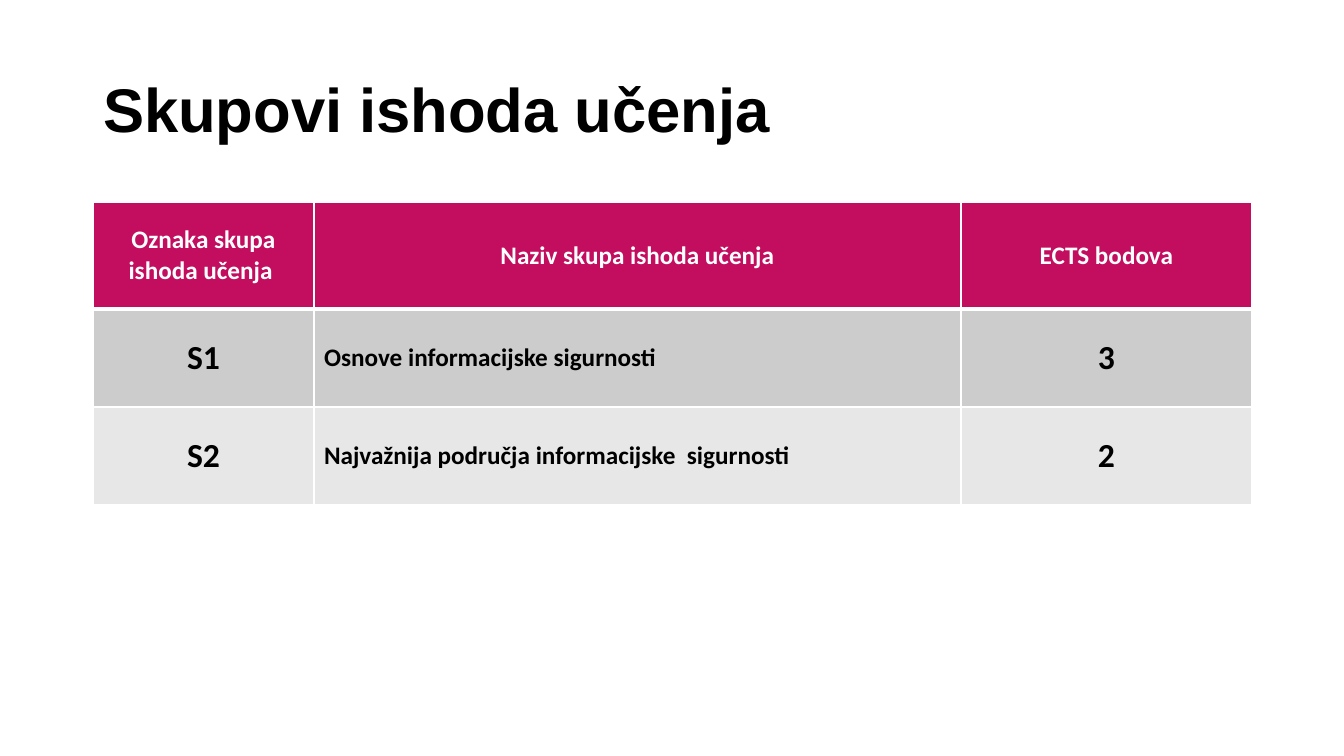
"""Build a slide with a title and a table of learning outcome sets."""
from lxml import etree
from pptx import Presentation
from pptx.dml.color import RGBColor
from pptx.enum.text import MSO_ANCHOR, PP_ALIGN
from pptx.oxml.ns import qn
from pptx.util import Pt

PX = 12192000 / 1344
LEFT, CENTER = PP_ALIGN.LEFT, PP_ALIGN.CENTER
MIDDLE = MSO_ANCHOR.MIDDLE
WHITE = RGBColor(0xFF, 0xFF, 0xFF)
BLACK = RGBColor(0, 0, 0)
PINK = RGBColor(0xC3, 0x0E, 0x60)
GRAY = RGBColor(0xCC, 0xCC, 0xCC)
PALE = RGBColor(0xE7, 0xE7, 0xE7)

COLS = (221, 647, 291)
ROWS = (107, 98, 98)
FILLS = (PINK, GRAY, PALE)
CELLS = (
    ("Oznaka skupa ishoda učenja ", "Naziv skupa ishoda učenja", "ECTS bodova"),
    ("S1", "Osnove informacijske sigurnosti", "3"),
    ("S2", "Najvažnija područja informacijske  sigurnosti", "2"),
)


def px(n):
    return round(n * PX)


def style(para, name, size, color, align):
    para.alignment = align
    font = para.font
    font.name, font.size, font.bold = name, Pt(size), True
    font.color.rgb = color


def add_title(slide, text):
    title = slide.shapes.title
    title.left, title.top = px(93), px(40)
    title.width, title.height = px(1159), px(146)
    frame = title.text_frame
    frame.text = text
    frame.vertical_anchor = MIDDLE
    para = frame.paragraphs[0]
    para.line_spacing = 0.9
    style(para, "Arial", 44, BLACK, LEFT)


def add_edge(cell, side, width):
    props = cell._tc.get_or_add_tcPr()
    line = etree.SubElement(props, qn("a:ln" + side), w=str(Pt(width)))
    fill = etree.SubElement(line, qn("a:solidFill"))
    etree.SubElement(fill, qn("a:srgbClr"), val=str(WHITE))


def fill_cell(cell, text, row, col):
    head = row == 0
    name = col == 1
    edges = {"L": 1, "R": 1, "T": 3 if row == 1 else 1, "B": 3 if head else 1}
    for side, width in edges.items():
        add_edge(cell, side, width)
    cell.fill.solid()
    cell.fill.fore_color.rgb = FILLS[row]
    cell.vertical_anchor = MIDDLE
    cell.text = text
    style(cell.text_frame.paragraphs[0], "Calibri",
          18 if head or name else 24,
          WHITE if head else BLACK,
          LEFT if name and not head else CENTER)


def add_grid(slide):
    table = slide.shapes.add_table(
        len(ROWS), len(COLS), px(93), px(202), px(sum(COLS)), px(sum(ROWS))).table
    for col, width in zip(table.columns, COLS):
        col.width = px(width)
    for row, height in zip(table.rows, ROWS):
        row.height = px(height)
    for r, texts in enumerate(CELLS):
        for c, text in enumerate(texts):
            fill_cell(table.cell(r, c), text, r, c)


def main():
    deck = Presentation()
    deck.slide_width, deck.slide_height = px(1344), px(756)
    slide = deck.slides.add_slide(deck.slide_layouts[5])
    add_title(slide, "Skupovi ishoda učenja")
    add_grid(slide)
    deck.save("out.pptx")


if __name__ == "__main__":
    main()
